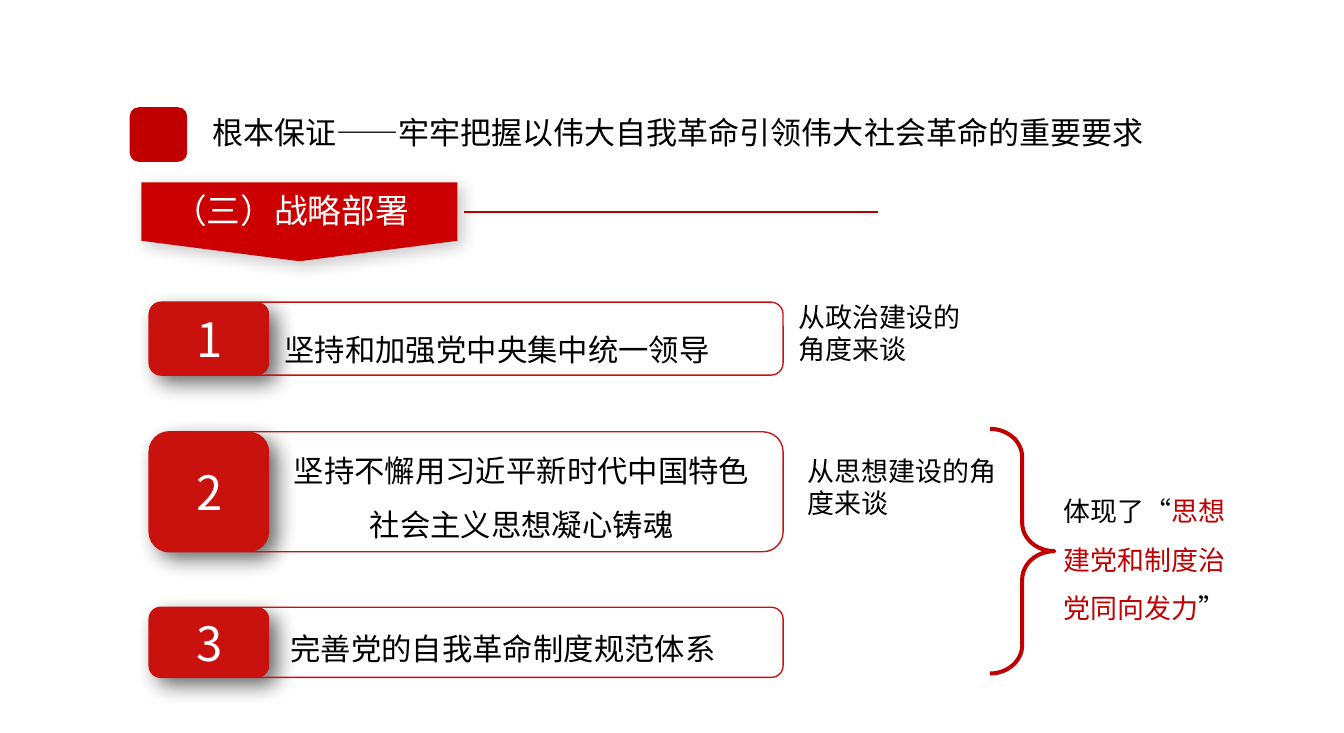
import pptx
import pptx.dml.color
import pptx.enum.shapes
import pptx.enum.text
import pptx.oxml
import pptx.oxml.ns
import pptx.util

WIDTH, HEIGHT = pptx.util.Inches(13.78), pptx.util.Inches(7.52)
FONT = "Noto Sans CJK SC"
BLACK, WHITE, RED, CARD_RED, BANNER_RED = "000000", "FFFFFF", "C00000", "C9110E", "CC0000"
LEFT = pptx.enum.text.PP_ALIGN.LEFT
CENTER = pptx.enum.text.PP_ALIGN.CENTER
SHAPES = pptx.enum.shapes.MSO_SHAPE


def rgb(color):
    return pptx.dml.color.RGBColor.from_string(color)


def across(percent):
    return round(WIDTH * percent / 100)


def down(percent):
    return round(HEIGHT * percent / 100)


def place(box):
    x, y, w, h = box
    return across(x), down(y), across(w), down(h)


def add_element(parent, tag, attributes="", content=""):
    xml = f"<a:{tag} {pptx.oxml.ns.nsdecls('a')} {attributes}>{content}</a:{tag}>"
    parent.append(pptx.oxml.parse_xml(xml))


def style(shape, fill=None, line=None, width=1, shadow=None):
    shape.shadow.inherit = False
    if fill:
        shape.fill.solid()
        shape.fill.fore_color.rgb = rgb(fill)
    else:
        shape.fill.background()
    if line:
        shape.line.color.rgb = rgb(line)
        shape.line.width = pptx.util.Pt(width)
    else:
        shape.line.fill.background()
    if shadow:
        alpha, blur, distance = shadow
        effects = shape._element.spPr.find(pptx.oxml.ns.qn("a:effectLst"))
        add_element(
            effects, "outerShdw",
            f'blurRad="{pptx.util.Pt(blur)}" dist="{pptx.util.Pt(distance)}" '
            'dir="2700000" algn="tl" rotWithShape="0"',
            f'<a:srgbClr val="{BLACK}"><a:alpha val="{alpha * 1000}"/></a:srgbClr>',
        )


def write(tf, pieces, size, align=LEFT, spacing=None):
    p = tf.paragraphs[0]
    p.alignment = align
    if spacing:
        p.line_spacing = spacing
    p.font.size = pptx.util.Pt(size)
    p.font.name = FONT
    for text, color in pieces:
        r = p.add_run()
        r.text = text
        r.font.color.rgb = rgb(color)
        r.font.size = pptx.util.Pt(size)
        r.font.name = FONT
        add_element(r.font._element, "ea", f'typeface="{FONT}"')


def add_text(s, box, pieces, size, align=LEFT, spacing=None):
    tf = s.shapes.add_textbox(*place(box)).text_frame
    tf.word_wrap = True
    write(tf, pieces, size, align, spacing)


def add_shape(s, kind, box, **look):
    sp = s.shapes.add_shape(kind, *place(box))
    style(sp, **look)
    return sp


def add_banner(s):
    left, right, top, side, tip = 10.52, 34.03, 24.87, 32.85, 35.64
    outline = [(right, side), ((left + right) / 2, tip), (left, side), (left, top)]
    builder = s.shapes.build_freeform(across(right), down(top))
    builder.add_line_segments([(across(x), down(y)) for x, y in outline], close=True)
    style(builder.convert_to_shape(), fill=BANNER_RED, shadow=(21, 12, 5))
    add_text(s, (left, 25.27, 22.28, 6.91), [("（三）战略部署", WHITE)], 24.9, CENTER)


def add_rule(s, start, end, y):
    rule = s.shapes.add_connector(
        pptx.enum.shapes.MSO_CONNECTOR.STRAIGHT,
        across(start), down(y), across(end), down(y),
    )
    rule.line.color.rgb = rgb(RED)
    rule.line.width = pptx.util.Pt(1.5)
    add_element(rule._element.spPr, "effectLst")


def add_card(s, number, top, height):
    left = 11.1
    badge = add_shape(s, SHAPES.ROUNDED_RECTANGLE, (left, top, 8.93, height),
                      fill=CARD_RED, shadow=(60, 16, 8))
    badge.text_frame.vertical_anchor = pptx.enum.text.MSO_ANCHOR.MIDDLE
    write(badge.text_frame, [(str(number), WHITE)], 34.9, CENTER)
    add_shape(s, SHAPES.ROUNDED_RECTANGLE, (left, top, 47.17, height), line=CARD_RED)


def main():
    prs = pptx.Presentation()
    prs.slide_width, prs.slide_height = WIDTH, HEIGHT
    s = prs.slides.add_slide(prs.slide_layouts[6])

    add_banner(s)
    add_rule(s, 34.54, 65.31, 28.86)

    cards = [(41.22, 9.97), (58.91, 16.36), (82.85, 9.57)]
    for number, (top, height) in enumerate(cards, 1):
        add_card(s, number, top, height)

    measures = [
        ((20.46, 42.02, 36.36, 7.58), "坚持和加强党中央集中统一领导", LEFT),
        ((20.25, 58.51, 37.16, 15.29), "坚持不懈用习近平新时代中国特色社会主义思想凝心铸魂", CENTER),
        ((20.9, 82.85, 34.54, 7.58), "完善党的自我革命制度规范体系", LEFT),
    ]
    for box, text, align in measures:
        add_text(s, box, [(text, BLACK)], 22.4, align, 1.5)

    angles = [
        ((58.71, 40.29, 14.95, 10.24), "从政治建设的角度来谈"),
        ((59.36, 61.3, 15.67, 10.24), "从思想建设的角度来谈"),
    ]
    for box, text in angles:
        add_text(s, box, [(text, BLACK)], 19.9)

    brace = add_shape(s, SHAPES.RIGHT_BRACE, (73.66, 58.51, 4.79, 33.38), line=RED, width=3)
    brace.adjustments[0] = 0.44
    conclusion = [("体现了“", BLACK), ("思想建党和制度治党同向发力", RED), ("”", BLACK)]
    add_text(s, (78.45, 64.63, 14.73, 20.35), conclusion, 19.9, spacing=1.5)

    heading = "根本保证——牢牢把握以伟大自我革命引领伟大社会革命的重要要求"
    add_text(s, (15.09, 14.89, 75.83, 6.52), [(heading, BLACK)], 22.9)
    add_shape(s, SHAPES.ROUNDED_RECTANGLE, (9.65, 14.63, 4.28, 7.45), fill=RED)

    prs.save("out.pptx")


if __name__ == "__main__":
    main()
